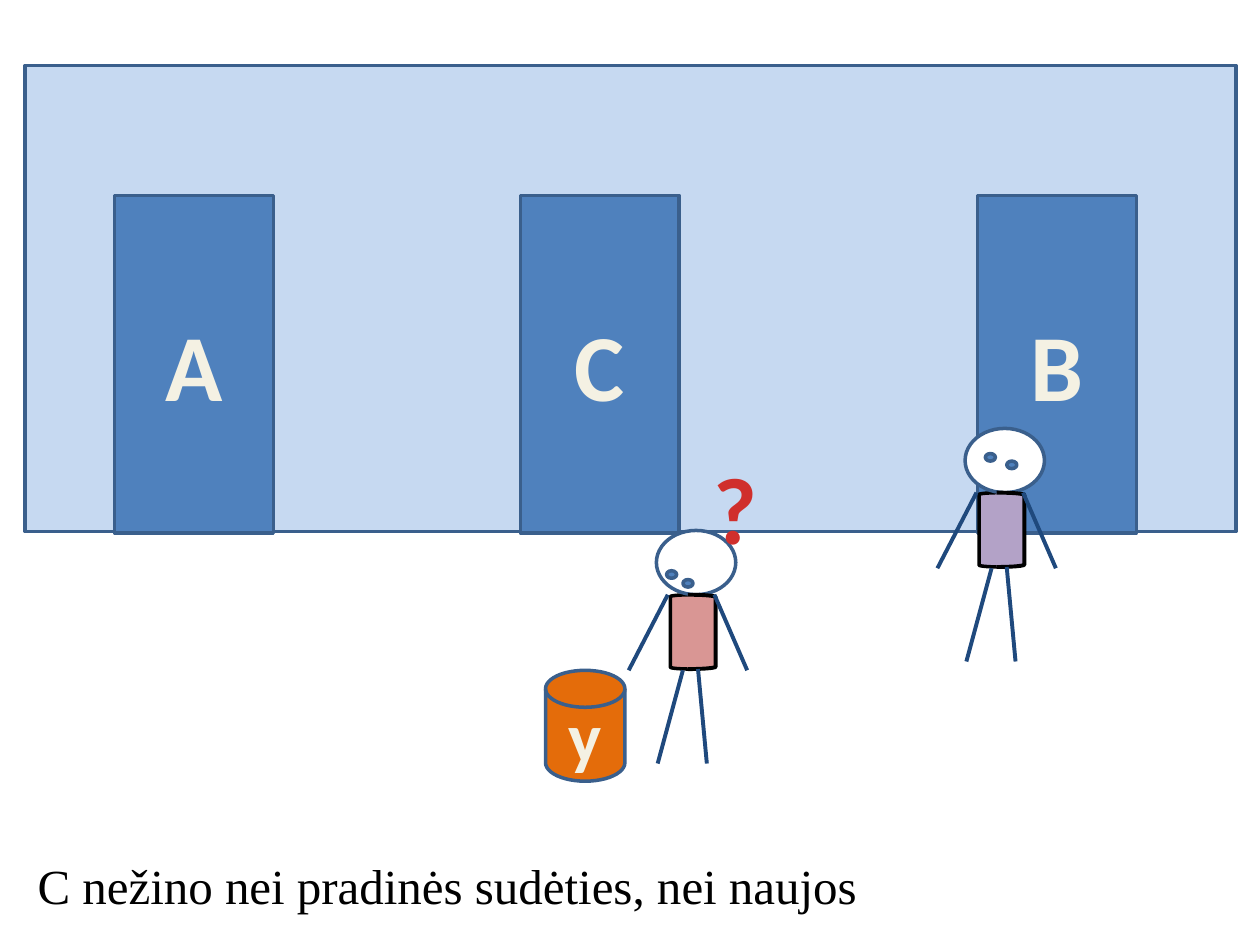
import pptx
from dataclasses import dataclass
from pptx.dml.color import RGBColor
from pptx.enum.shapes import MSO_CONNECTOR, MSO_SHAPE
from pptx.enum.text import MSO_ANCHOR, MSO_AUTO_SIZE, PP_ALIGN
from pptx.oxml.ns import qn
from pptx.util import Inches, Pt


@dataclass(frozen=True)
class Theme:
    wall: str = "C6D9F1"
    blue: str = "4F81BD"
    outline: str = "3A5F8C"
    limb: str = "1F497D"
    letter: str = "F4F1E3"
    question: str = "D02F2C"
    pot: str = "E46C0A"
    pink: str = "D99694"
    violet: str = "B3A2C7"
    white: str = "FFFFFF"
    black: str = "000000"
    font: str = "Calibri"
    caption_font: str = "Times New Roman"
    big: int = 54
    medium: int = 40
    caption: int = 28


T = Theme()

# Positions inside a figure, measured from the top left of its head
LIMBS = [
    (0.33, 1.10, 0.40, 1.85),
    (0.46, 0.51, 0.72, 1.11),
    (0.21, 1.11, 0.01, 1.85),
    (0.09, 0.51, -0.22, 1.11),
]


def rgb(color):
    return RGBColor.from_string(color)


def write(sp, text, size, color, font=T.font, bold=True, align=PP_ALIGN.CENTER):
    p = sp.text_frame.paragraphs[0]
    p.text = text
    p.alignment = align
    f = p.runs[0].font
    f.name, f.size, f.bold = font, Pt(size), bold
    f.color.rgb = rgb(color)


def add_shape(shapes, kind, x, y, w, h, fill, line=T.outline, width=2):
    sp = shapes.add_shape(kind, Inches(x), Inches(y), Inches(w), Inches(h))
    sp.shadow.inherit = False
    sp.fill.solid()
    sp.fill.fore_color.rgb = rgb(fill)
    sp.line.color.rgb = rgb(line)
    sp.line.width = Pt(width)
    return sp


def add_lettered(shapes, kind, x, y, w, h, fill, letter, size):
    sp = add_shape(shapes, kind, x, y, w, h, fill)
    sp.text_frame.vertical_anchor = MSO_ANCHOR.MIDDLE
    write(sp, letter, size, T.letter)


def add_text(shapes, x, y, w, h, wrap, *args, **style):
    tb = shapes.add_textbox(Inches(x), Inches(y), Inches(w), Inches(h))
    tb.text_frame.word_wrap = wrap
    tb.text_frame.auto_size = MSO_AUTO_SIZE.SHAPE_TO_FIT_TEXT
    write(tb, *args, **style)


def add_limb(shapes, x1, y1, x2, y2):
    cx = shapes.add_connector(MSO_CONNECTOR.STRAIGHT, Inches(x1), Inches(y1),
                              Inches(x2), Inches(y2))
    cx.line.color.rgb = rgb(T.limb)
    cx.line.width = Pt(2.25)
    cx._element.spPr.append(cx._element.makeelement(qn("a:effectLst"), {}))


def add_figure(shapes, x, y, shirt, eyes):
    """Draw a grouped stick figure; eyes are offsets from the head's corner."""
    g = shapes.add_group_shape().shapes
    add_shape(g, MSO_SHAPE.LEFT_BRACKET, x + 0.11, y + 0.51, 0.18, 0.59,
              shirt, T.black)
    add_shape(g, MSO_SHAPE.OVAL, x, y, 0.63, 0.51, T.white)
    for dx, dy in eyes:
        add_shape(g, MSO_SHAPE.OVAL, x + dx, y + dy, 0.08, 0.06, T.blue)
    add_shape(g, MSO_SHAPE.RIGHT_BRACKET, x + 0.25, y + 0.51, 0.22, 0.59,
              shirt, T.black, 2.25)
    for x1, y1, x2, y2 in LIMBS:
        add_limb(g, x + x1, y + y1, x + x2, y + y2)


def main():
    prs = pptx.Presentation()
    prs.slide_width, prs.slide_height = Inches(10), Inches(7.5)
    s = prs.slides.add_slide(prs.slide_layouts[6])
    shapes = s.shapes

    add_shape(shapes, MSO_SHAPE.RECTANGLE, 0.2, 0.52, 9.61, 3.7, T.wall)
    for letter, x in (("A", 0.91), ("B", 7.76), ("C", 4.13)):
        add_lettered(shapes, MSO_SHAPE.RECTANGLE, x, 1.55, 1.26, 2.68,
                     T.blue, letter, T.big)

    add_figure(shapes, 5.21, 4.21, T.pink, [(0.08, 0.32), (0.21, 0.39)])
    add_text(shapes, 5.56, 3.52, 0.55, 1.01, False, "?", T.big, T.question)
    add_lettered(shapes, MSO_SHAPE.FLOWCHART_MAGNETIC_DISK, 4.33, 5.32,
                 0.63, 0.88, T.pot, "y", T.medium)
    add_figure(shapes, 7.66, 3.4, T.violet, [(0.16, 0.2), (0.33, 0.26)])

    add_text(shapes, 0.2, 6.74, 9.53, 0.57, True,
             "C nežino nei pradinės sudėties, nei naujos", T.caption, T.black,
             font=T.caption_font, bold=False, align=PP_ALIGN.LEFT)
    prs.save("out.pptx")


if __name__ == "__main__":
    main()
